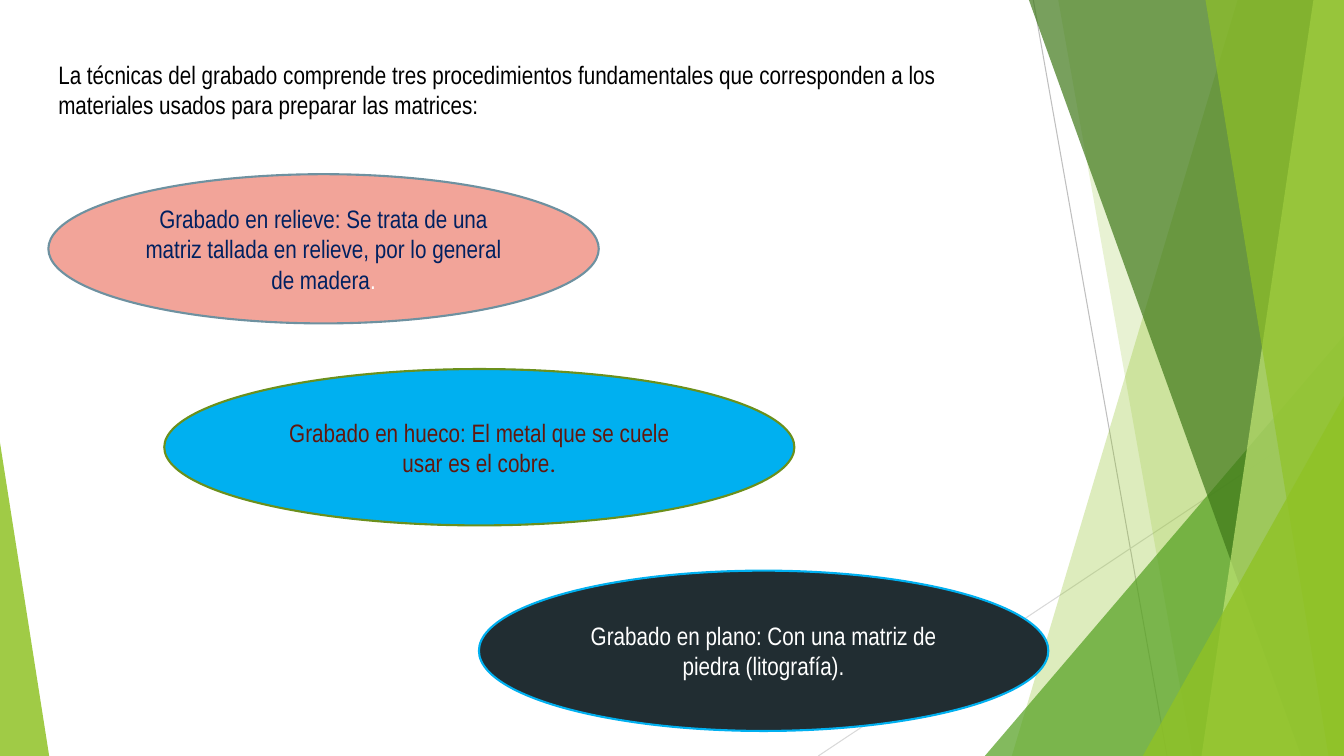
"""Builds a slide on the three fundamental engraving techniques."""
import pptx
import pptx.dml.color
import pptx.enum.shapes
import pptx.enum.text
import pptx.oxml.ns
import pptx.util
from lxml import etree
from pptx.util import Cm

WIDTH, HEIGHT = 33.87, 19.05
SHAPES = pptx.enum.shapes.MSO_SHAPE
FONT = "Arial Narrow"


def color(code):
    """Return the colour for a hex string."""
    return pptx.dml.color.RGBColor.from_string(code)


def paint(shape, fill, opacity=100):
    """Give a shape a flat fill without outline or shadow."""
    shape.shadow.inherit = False
    shape.line.fill.background()
    shape.fill.solid()
    shape.fill.fore_color.rgb = color(fill)
    if opacity < 100:
        tint = shape.fill._xPr.find(".//" + pptx.oxml.ns.qn("a:srgbClr"))
        etree.SubElement(tint, pptx.oxml.ns.qn("a:alpha"), val=str(opacity * 1000))


def add_ray(slide, box, start, end, line):
    """Draw a thin line between two points of the box."""
    left, top, _, _ = box
    ray = slide.shapes.add_connector(
        pptx.enum.shapes.MSO_CONNECTOR.STRAIGHT,
        Cm(left + start[0]), Cm(top + start[1]), Cm(left + end[0]), Cm(top + end[1]))
    ray.line.color.rgb = color(line)
    ray.line.width = pptx.util.Pt(0.75)
    etree.SubElement(ray._element.spPr, pptx.oxml.ns.qn("a:effectLst"))


def add_pane(slide, box, upper, lower, fill, opacity):
    """Fill the box to the right of a slanted edge."""
    left, top, width, height = box
    right, bottom = left + width, top + height
    corners = [(left + upper, top), (right, top), (right, bottom), (left + lower, bottom)]
    points = [(Cm(x), Cm(y)) for x, y in corners]
    builder = slide.shapes.build_freeform(*points[0])
    builder.add_line_segments(points[1:], close=True)
    paint(builder.convert_to_shape(), fill, opacity)


def add_wedge(slide, box, apex, fill, opacity):
    """Fill the box with a right triangle whose apex is at 0 (left) or 1 (right)."""
    wedge = slide.shapes.add_shape(SHAPES.ISOSCELES_TRIANGLE, *map(Cm, box))
    wedge.adjustments[0] = apex
    paint(wedge, fill, opacity)


def add_corner_wedge(slide, box, inset, drop, fill, opacity):
    """Place a wedge in the lower right corner of the box."""
    left, top, width, height = box
    add_wedge(slide, (left + inset, top + drop, width - inset, height - drop), 1, fill, opacity)


def add_facets(slide, box):
    """Draw the overlapping green facets along the right side."""
    _, _, width, height = box
    add_ray(slide, box, (1.22, 0), (4.59, height), "BFBFBF")
    add_ray(slide, box, (width, 10.24), (-4.2, height), "D9D9D9")
    facets = [
        (add_pane, 6.37, 0.68, "90C226", 30),
        (add_pane, 1.85, 5.23, "90C226", 20),
        (add_corner_wedge, 0, 8.46, "54A021", 72),
        (add_pane, 1.11, 7.97, "3F7819", 70),
        (add_pane, 8.28, 5.46, "C0E474", 70),
        (add_pane, 5.56, 8.66, "90C226", 65),
        (add_corner_wedge, 3.98, 9.98, "90C226", 80),
    ]
    for add_facet, first, second, fill, opacity in facets:
        add_facet(slide, box, first, second, fill, opacity)


def format_paragraph(paragraph, ink):
    """Set the common text size, font and colour."""
    paragraph.font.size = pptx.util.Pt(18)
    paragraph.font.name = FONT
    paragraph.font.color.rgb = color(ink)


def add_introduction(slide, box, text):
    """Write the introductory sentence."""
    frame = slide.shapes.add_textbox(*map(Cm, box)).text_frame
    frame.word_wrap = True
    frame.auto_size = pptx.enum.text.MSO_AUTO_SIZE.SHAPE_TO_FIT_TEXT
    frame.text = text
    format_paragraph(frame.paragraphs[0], "000000")


def add_technique(slide, box, text, fill, line, ink):
    """Draw an ellipse describing one technique and return its paragraph."""
    ellipse = slide.shapes.add_shape(SHAPES.OVAL, *map(Cm, box))
    paint(ellipse, fill)
    ellipse.line.color.rgb = color(line)
    ellipse.line.width = pptx.util.Pt(1.5)
    frame = ellipse.text_frame
    frame.word_wrap = True
    frame.vertical_anchor = pptx.enum.text.MSO_ANCHOR.MIDDLE
    paragraph = frame.paragraphs[0]
    paragraph.alignment = pptx.enum.text.PP_ALIGN.CENTER
    paragraph.add_run().text = text
    format_paragraph(paragraph, ink)
    return paragraph


def add_full_stop(paragraph):
    """Add a separately formatted full stop and return its font."""
    run = paragraph.add_run()
    run.text = "."
    return run.font


def build_techniques_slide(presentation):
    """Add the slide with the three engraving techniques."""
    slide = presentation.slides.add_slide(presentation.slide_layouts[6])
    add_facets(slide, (24.82, 0, WIDTH - 24.82, HEIGHT))
    add_wedge(slide, (0, 11.15, 1.24, HEIGHT - 11.15), 0, "90C226", 85)
    add_introduction(
        slide, (1.22, 1.37, 23.93, 1.8),
        "La técnicas del grabado comprende tres procedimientos fundamentales que "
        "corresponden a los materiales usados para preparar las matrices:")
    relief = add_technique(
        slide, (1.22, 4.39, 13.87, 3.76),
        "Grabado en relieve: Se trata de una matriz tallada en relieve, "
        "por lo general de madera",
        "F2A499", "6E91A0", "002060")
    add_full_stop(relief).color.rgb = color("FFFFFF")
    intaglio = add_technique(
        slide, (4.14, 9.3, 15.88, 3.94),
        "Grabado en hueco: El metal que se cuele usar es el cobre",
        "00B0F0", "6B901C", "62170D")
    add_full_stop(intaglio).name = "Roboto"
    add_technique(
        slide, (12.07, 14.38, 14.35, 4.04),
        "Grabado en plano: Con una matriz de piedra (litografía).",
        "212D32", "00B0F0", "FFFFFF")


def main():
    """Create and save the presentation."""
    presentation = pptx.Presentation()
    presentation.slide_width = Cm(WIDTH)
    presentation.slide_height = Cm(HEIGHT)
    build_techniques_slide(presentation)
    presentation.save("out.pptx")


if __name__ == "__main__":
    main()
